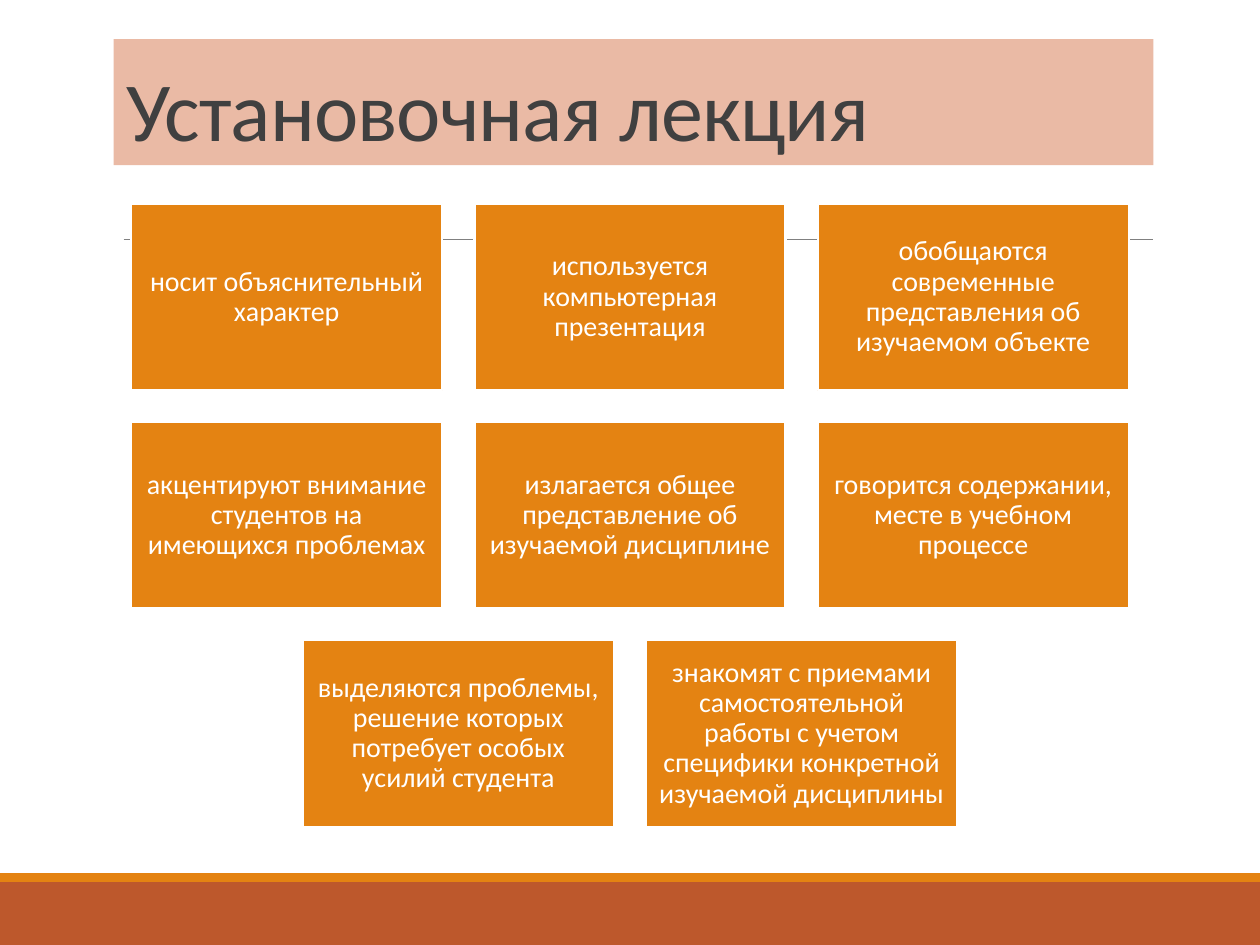
import pptx
import pptx.util
import pptx.dml.color
import pptx.enum.shapes
import pptx.enum.text
import lxml.etree
from pptx.util import Cm

# Content
TITLE = "Установочная лекция"
CARD_ROWS = [
    ["носит объяснительный характер",
     "используется компьютерная презентация",
     "обобщаются современные представления об изучаемом объекте"],
    ["акцентируют внимание студентов на имеющихся проблемах",
     "излагается общее представление об изучаемой дисциплине",
     "говорится содержании, месте в учебном процессе"],
    ["выделяются проблемы, решение которых потребует особых усилий студента",
     "знакомят с приемами самостоятельной работы с учетом специфики "
     "конкретной изучаемой дисциплины"],
]

# Colours
ORANGE = pptx.dml.color.RGBColor(0xE4, 0x83, 0x12)
RUST = pptx.dml.color.RGBColor(0xBD, 0x58, 0x2C)
PEACH = pptx.dml.color.RGBColor(0xEA, 0xBA, 0xA5)
GREY = pptx.dml.color.RGBColor(0x80, 0x80, 0x80)
DARK = pptx.dml.color.RGBColor(0x40, 0x40, 0x40)
WHITE = pptx.dml.color.RGBColor(0xFF, 0xFF, 0xFF)

# Sizes in centimetres
PAGE_WIDTH, PAGE_HEIGHT = 25.4, 19.05
CARD_WIDTH, CARD_HEIGHT = 6.27, 3.76
GAP_X, GAP_Y = 0.65, 0.64
CARDS_TOP = 4.11

ALIGN = pptx.enum.text.PP_ALIGN
ANCHOR = pptx.enum.text.MSO_ANCHOR


def write_text(shape, text, *, size, color, align, anchor, line_spacing,
               inset_x, inset_y, tracking=None):
    """Fill a shape with one formatted paragraph."""
    frame = shape.text_frame
    frame.word_wrap = True
    frame.auto_size = pptx.enum.text.MSO_AUTO_SIZE.NONE
    frame.vertical_anchor = anchor
    frame.margin_left = frame.margin_right = Cm(inset_x)
    frame.margin_top = frame.margin_bottom = Cm(inset_y)
    para = frame.paragraphs[0]
    para.alignment = align
    para.line_spacing = line_spacing
    span = para.add_run()
    span.text = text
    span.font.name = "Calibri"
    span.font.size = pptx.util.Pt(size)
    span.font.color.rgb = color
    if tracking is not None:
        span.font._element.set("spc", str(round(tracking * 100)))


def add_box(page, left, top, width, height, fill, outline=None):
    box = page.shapes.add_shape(pptx.enum.shapes.MSO_SHAPE.RECTANGLE,
                                Cm(left), Cm(top), Cm(width), Cm(height))
    box.shadow.inherit = False
    box.fill.solid()
    box.fill.fore_color.rgb = fill
    if outline is None:
        box.line.fill.background()
    else:
        box.line.color.rgb = outline
        box.line.width = pptx.util.Pt(1.25)
    return box


def add_rule(page, left, right, y):
    rule = page.shapes.add_connector(pptx.enum.shapes.MSO_CONNECTOR.STRAIGHT,
                                     Cm(left), Cm(y), Cm(right), Cm(y))
    rule.line.color.rgb = GREY
    rule.line.width = pptx.util.Pt(0.5)
    lxml.etree.SubElement(rule._element.spPr, pptx.oxml.ns.qn("a:effectLst"))


def add_cards(page):
    """Stack the rows of cards, each row centred on the page."""
    for row, texts in enumerate(CARD_ROWS):
        row_width = len(texts) * (CARD_WIDTH + GAP_X) - GAP_X
        row_left = (PAGE_WIDTH - row_width) / 2
        top = CARDS_TOP + row * (CARD_HEIGHT + GAP_Y)
        for column, text in enumerate(texts):
            left = row_left + column * (CARD_WIDTH + GAP_X)
            card = add_box(page, left, top, CARD_WIDTH, CARD_HEIGHT, ORANGE, WHITE)
            write_text(card, text, size=16, color=WHITE, align=ALIGN.CENTER,
                       anchor=ANCHOR.MIDDLE, line_spacing=0.9,
                       inset_x=0.17, inset_y=0.17)


def main():
    deck = pptx.Presentation()
    deck.slide_width, deck.slide_height = Cm(PAGE_WIDTH), Cm(PAGE_HEIGHT)
    page = deck.slides.add_slide(deck.slide_layouts[5])

    # Bottom bands and the rule behind the cards
    add_box(page, 0, 17.78, PAGE_WIDTH, 1.27, RUST)
    add_box(page, 0, 17.6, PAGE_WIDTH, 0.18, ORANGE)
    add_rule(page, 2.49, 23.24, 4.83)

    add_cards(page)

    # Title
    title = page.shapes.title
    title.left, title.top = Cm(2.29), Cm(0.79)
    title.width, title.height = Cm(20.96), Cm(2.54)
    title.fill.solid()
    title.fill.fore_color.rgb = PEACH
    write_text(title, TITLE, size=48, color=DARK, align=ALIGN.LEFT,
               anchor=ANCHOR.BOTTOM, line_spacing=0.85,
               inset_x=0.25, inset_y=0.13, tracking=-0.5)

    deck.save("out.pptx")


if __name__ == "__main__":
    main()
